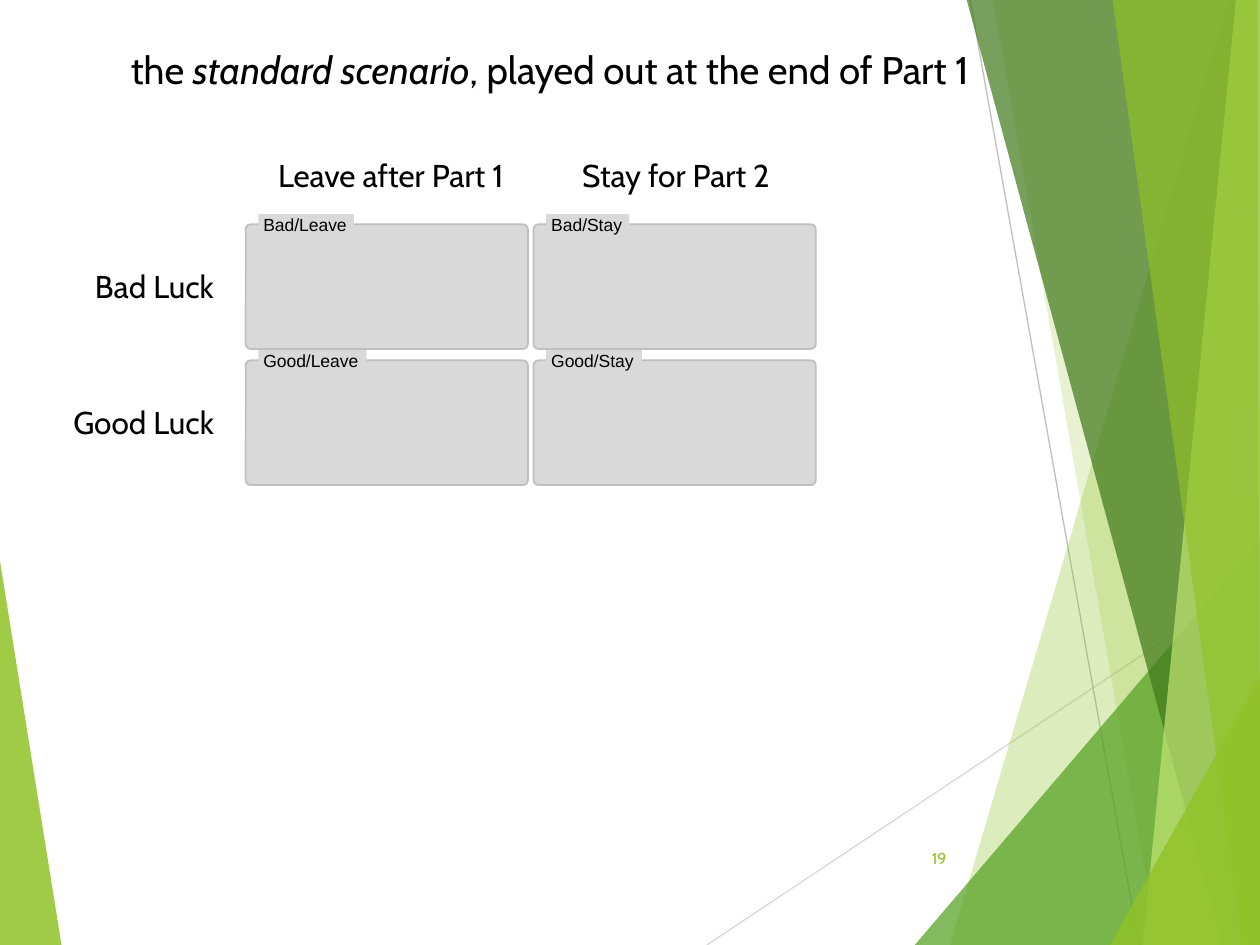
from dataclasses import dataclass

from lxml import etree
from pptx import Presentation
from pptx import util as u
from pptx.dml.color import RGBColor
from pptx.enum import shapes, text
from pptx.oxml.ns import qn

# The slide is a grid of 100 columns by 75 rows
COLUMNS, ROWS = 100, 75
WIDTH, HEIGHT = u.Inches(10), u.Inches(7.5)
COLORS = {
    "black": "000000", "lime": "90C226", "green": "54A021", "forest": "3F7819",
    "pale": "C0E474", "panel": "D9D9D9", "border": "BFBFBF",
}


@dataclass
class Ray:
    color: str
    opacity: int
    points: list[tuple[float, float]]


@dataclass
class Stroke:
    color: str
    start: tuple[float, float]
    end: tuple[float, float]


@dataclass
class Label:
    runs: list[tuple[str, bool]]  # wording, italic
    box: tuple[float, float, float, float]
    size: int = 18
    color: str = "black"
    align: text.PP_ALIGN = text.PP_ALIGN.CENTER
    anchor: text.MSO_ANCHOR = text.MSO_ANCHOR.TOP
    wrap: bool = False


@dataclass
class Cell:
    name: str
    column: int
    row: int
    tag_width: float


# Background decoration, from back to front
LEFT_RAY = Ray("lime", 85, [(-0.1, 43.9), (4.9, 75.1), (-0.1, 75)])
STROKES = [
    Stroke("panel", (56.1, 75), (100.1, 45.7)),
    Stroke("border", (77, 0), (90.4, 75)),
]
RIGHT_RAYS = [
    Ray("lime", 30, [(97.5, 0), (75.4, 75), (100.2, 75.1), (100.1, 0)]),
    Ray("lime", 20, [(78.8, -0.1), (91.9, 75), (100.1, 75), (100.1, -0.1)]),
    Ray("green", 72, [(72.6, 75), (100, 42.9), (100.1, 75)]),
    Ray("forest", 70, [(76.7, -0.1), (97, 75), (100.1, 75), (100.1, -0.1)]),
    Ray("pale", 70, [(98.1, -0.1), (90.7, 75), (100.1, 75), (100, -0.1)]),
    Ray("lime", 65, [(88.3, -0.1), (98.6, 75), (100, 75), (99.8, -0.1)]),
    Ray("lime", 80, [(88.1, 75), (100.1, 53.5), (100.1, 75)]),
]

# Payoff matrix
CELL_LEFT, CELL_TOP = 19.5, 17.8
CELL_WIDTH, CELL_HEIGHT = 22.4, 9.9
COLUMN_STEP, ROW_STEP = 22.85, 10.8
CELLS = [
    Cell("Bad/Leave", 0, 0, 7.6),
    Cell("Bad/Stay", 1, 0, 6.6),
    Cell("Good/Leave", 0, 1, 8.6),
    Cell("Good/Stay", 1, 1, 7.6),
]

LABELS = [
    Label([("Leave after Part 1 ", False)], (19.9, 11.9, 22.8, 4)),
    Label([("Stay for Part 2", False)], (44.6, 11.9, 18.1, 4)),
    Label([("Bad Luck", False)], (6, 20.7, 12.5, 4)),
    Label([("Good Luck", False)], (4.3, 31.5, 14.2, 4)),
    Label([("the ", False), ("standard scenario", True),
           (", played out at the end of Part 1", False)],
          (9.4, 3.2, 68.7, 4.7), size=22, align=text.PP_ALIGN.LEFT),
    Label([("19", False)], (70.5, 66.1, 5.6, 4), size=9, color="lime",
          align=text.PP_ALIGN.RIGHT, anchor=text.MSO_ANCHOR.MIDDLE, wrap=True),
]


def across(columns: float) -> int:
    return round(WIDTH * columns / COLUMNS)


def down(rows: float) -> int:
    return round(HEIGHT * rows / ROWS)


def place(left: float, top: float, width: float, height: float) -> tuple[int, int, int, int]:
    return across(left), down(top), across(width), down(height)


def rgb(name: str) -> RGBColor:
    return RGBColor.from_string(COLORS[name])


def fill_shape(shape, color: str) -> None:
    shape.shadow.inherit = False
    shape.fill.solid()
    shape.fill.fore_color.rgb = rgb(color)
    shape.line.fill.background()


def draw_ray(slide, ray: Ray) -> None:
    corners = [(across(x), down(y)) for x, y in ray.points]
    builder = slide.shapes.build_freeform(*corners[0])
    builder.add_line_segments(corners[1:], close=True)
    shape = builder.convert_to_shape()
    fill_shape(shape, ray.color)
    color_element = next(shape.element.spPr.iter(qn("a:srgbClr")))
    etree.SubElement(color_element, qn("a:alpha"), val=str(ray.opacity * 1000))


def draw_stroke(slide, stroke: Stroke) -> None:
    (x1, y1), (x2, y2) = stroke.start, stroke.end
    connector = slide.shapes.add_connector(
        shapes.MSO_CONNECTOR.STRAIGHT, across(x1), down(y1), across(x2), down(y2))
    connector.line.color.rgb = rgb(stroke.color)
    connector.line.width = u.Pt(0.75)
    etree.SubElement(connector.element.spPr, qn("a:effectLst"))


def draw_panel(slide, cell: Cell) -> None:
    panel = slide.shapes.add_shape(
        shapes.MSO_SHAPE.ROUNDED_RECTANGLE,
        *place(CELL_LEFT + cell.column * COLUMN_STEP, CELL_TOP + cell.row * ROW_STEP,
               CELL_WIDTH, CELL_HEIGHT))
    panel.adjustments[0] = 0.04
    fill_shape(panel, "panel")
    panel.line.color.rgb = rgb("border")
    panel.line.width = u.Pt(1)


def draw_tag(slide, cell: Cell) -> None:
    tag = slide.shapes.add_shape(
        shapes.MSO_SHAPE.RECTANGLE,
        *place(CELL_LEFT + 1 + cell.column * COLUMN_STEP,
               CELL_TOP - 0.8 + cell.row * ROW_STEP, cell.tag_width, 1.7))
    fill_shape(tag, "panel")
    frame = tag.text_frame
    frame.margin_left = frame.margin_right = u.Inches(0.04)
    frame.margin_top = frame.margin_bottom = 0
    frame.vertical_anchor = text.MSO_ANCHOR.TOP
    frame.word_wrap = False
    paragraph = frame.paragraphs[0]
    paragraph.text = cell.name
    paragraph.alignment = text.PP_ALIGN.LEFT
    paragraph.font.name = "Arial"
    paragraph.font.size = u.Pt(10)
    paragraph.font.color.rgb = rgb("black")


def draw_label(slide, label: Label) -> None:
    frame = slide.shapes.add_textbox(*place(*label.box)).text_frame
    frame.word_wrap = label.wrap
    frame.vertical_anchor = label.anchor
    paragraph = frame.paragraphs[0]
    paragraph.alignment = label.align
    paragraph.font.name = "Cabin"
    paragraph.font.size = u.Pt(label.size)
    paragraph.font.color.rgb = rgb(label.color)
    for wording, italic in label.runs:
        run = paragraph.add_run()
        run.text = wording
        if italic:
            run.font.italic = True


def main() -> None:
    presentation = Presentation()
    presentation.slide_width, presentation.slide_height = WIDTH, HEIGHT
    slide = presentation.slides.add_slide(presentation.slide_layouts[6])

    # Background
    draw_ray(slide, LEFT_RAY)
    for stroke in STROKES:
        draw_stroke(slide, stroke)
    for ray in RIGHT_RAYS:
        draw_ray(slide, ray)

    # Matrix: panels first, so the tags lie over their borders
    for cell in CELLS:
        draw_panel(slide, cell)
    for cell in CELLS:
        draw_tag(slide, cell)

    # Title, headings and page number
    for label in LABELS:
        draw_label(slide, label)
    presentation.save("out.pptx")


if __name__ == "__main__":
    main()
